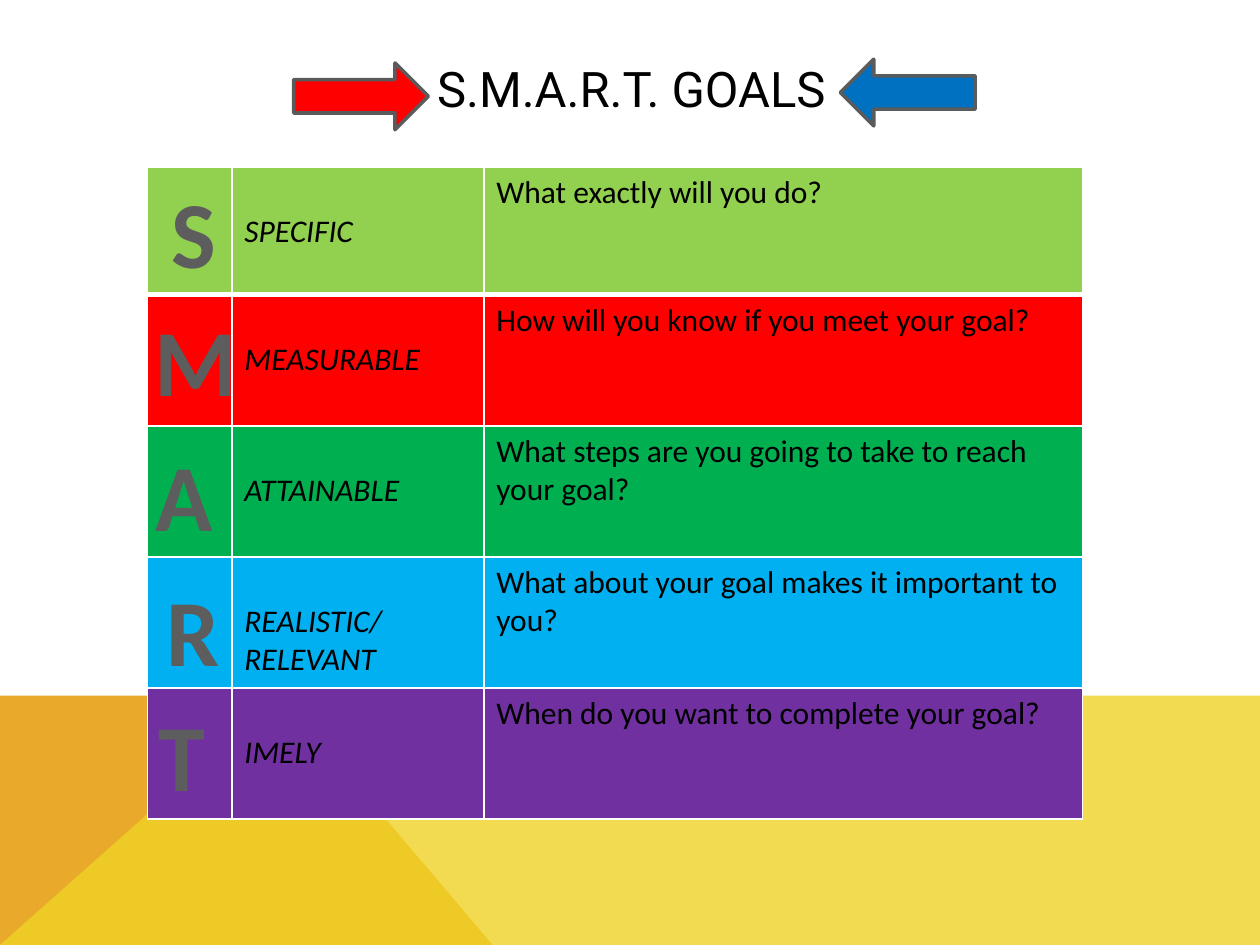
import dataclasses

import pptx
import pptx.dml.color
import pptx.enum.shapes
import pptx.enum.text
import pptx.oxml
import pptx.oxml.ns
import pptx.util
from pptx.enum.shapes import MSO_SHAPE
from pptx.enum.text import MSO_ANCHOR, PP_ALIGN


@dataclasses.dataclass(frozen=True)
class Theme:
    ink: str = "000000"
    letter: str = "5D5D5D"
    outline: str = "5A5B5D"
    rule: str = "FFFFFF"
    orange: str = "E9AA2B"
    yellow: str = "EFD225"
    red: str = "FF0000"
    blue: str = "0070C0"
    title_font: str = "Roboto"
    body_font: str = "Calibri"
    title_size: int = 28
    letter_size: int = 54
    body_size: int = 18


@dataclasses.dataclass(frozen=True)
class Box:
    """A place on a grid of 100 columns by 75 rows."""
    left: float
    top: float
    width: float
    height: float

    def emu(self) -> list:
        return [grid(n) for n in dataclasses.astuple(self)]


@dataclasses.dataclass(frozen=True)
class Goal:
    letter: str
    name: str
    question: str
    fill: str
    letter_box: Box
    wrap: bool = False


@dataclasses.dataclass(frozen=True)
class Arrow:
    kind: MSO_SHAPE
    box: Box
    fill: str


THEME = Theme()
COLS, ROWS = 100, 75
UNIT = pptx.util.Inches(10) / COLS
TABLE = Box(11.7, 13.3, 74.2, 51.7)
COLUMN_WIDTHS = (6.7, 20, 47.5)
ROW_HEIGHTS = (10.1, 10.4, 10.4, 10.4, 10.4)
TITLE = Box(9, 4, 82.2, 6)
HORIZON = 55.2

GOALS = (
    Goal("S", "SPECIFIC", "What exactly will you do?", "92D050",
         Box(11.7, 13.3, 7.3, 10.1)),
    Goal("M", "MEASURABLE", "How will you know if you meet your goal?", "FF0000",
         Box(11.3, 23.5, 7.4, 10.1), True),
    Goal("A", "ATTAINABLE", "What steps are you going to take to reach your goal?",
         "00B050", Box(11.1, 34.2, 7, 10.1)),
    Goal("R", "REALISTIC/\nRELEVANT", "What about your goal makes it important to you?",
         "00B0F0", Box(11.9, 44.9, 6.8, 10.1)),
    Goal("T", "IMELY", "When do you want to complete your goal?", "7030A0",
         Box(11.4, 54.8, 6, 10.1)),
)
ARROWS = (
    Arrow(MSO_SHAPE.RIGHT_ARROW, Box(23.3, 5, 10.7, 5.3), THEME.red),
    Arrow(MSO_SHAPE.LEFT_ARROW, Box(66.7, 4.7, 10.7, 5.3), THEME.blue),
)


def grid(n: float) -> int:
    return round(n * UNIT)


def rgb(color: str) -> pptx.dml.color.RGBColor:
    return pptx.dml.color.RGBColor.from_string(color)


def paint(target, color: str) -> None:
    target.fill.solid()
    target.fill.fore_color.rgb = rgb(color)


def format_text(tf, size: int, font: str, color: str, align=None, **styles) -> None:
    values = {"size": pptx.util.Pt(size), "name": font, **styles}
    for p in tf.paragraphs:
        p.alignment = align
        for r in p.runs:
            for key, value in values.items():
                setattr(r.font, key, value)
            r.font.color.rgb = rgb(color)


def add_facet(slide, points: list, color: str, opacity: int = 100) -> None:
    """Draw one flat polygon of the background."""
    corners = [(grid(x), grid(y)) for x, y in points]
    builder = slide.shapes.build_freeform(*corners[0])
    builder.add_line_segments(corners[1:], close=True)
    sp = builder.convert_to_shape()
    sp.shadow.inherit = False
    paint(sp, color)
    sp.line.fill.background()
    if opacity < 100:
        clr = sp.fill._xPr.find(".//" + pptx.oxml.ns.qn("a:srgbClr"))
        clr.append(pptx.oxml.parse_xml(
            f'<a:alpha {pptx.oxml.ns.nsdecls("a")} val="{opacity * 1000}"/>'))


def add_borders(cell, bottom: float, top: float) -> None:
    tc_pr = cell._tc.get_or_add_tcPr()
    for side, width in {"L": 1, "R": 1, "T": top, "B": bottom}.items():
        tc_pr.append(pptx.oxml.parse_xml(
            f'<a:ln{side} {pptx.oxml.ns.nsdecls("a")} w="{pptx.util.Pt(width)}">'
            f'<a:solidFill><a:srgbClr val="{THEME.rule}"/></a:solidFill></a:ln{side}>'))


def add_goal_table(slide) -> None:
    table = slide.shapes.add_table(len(GOALS), len(COLUMN_WIDTHS), *TABLE.emu()).table
    table.first_row = table.horz_banding = False
    for column, width in zip(table.columns, COLUMN_WIDTHS):
        column.width = grid(width)
    for i, (goal, height) in enumerate(zip(GOALS, ROW_HEIGHTS)):
        table.rows[i].height = grid(height)
        for cell, text in zip(table.rows[i].cells, ("", goal.name, goal.question)):
            add_borders(cell, bottom=3 if i == 0 else 1, top=3 if i == 1 else 1)
            paint(cell, goal.fill)
            cell.text = text
            is_name = text == goal.name
            format_text(cell.text_frame, THEME.body_size, THEME.body_font,
                        THEME.ink, italic=is_name, bold=False)
            if is_name:
                cell.margin_top = pptx.util.Inches(0.36)


def add_letter(slide, goal: Goal) -> None:
    tf = slide.shapes.add_textbox(*goal.letter_box.emu()).text_frame
    tf.word_wrap = goal.wrap
    tf.text = goal.letter
    format_text(tf, THEME.letter_size, THEME.body_font, THEME.letter,
                PP_ALIGN.CENTER, bold=True)


def add_arrow(slide, arrow: Arrow) -> None:
    sp = slide.shapes.add_shape(arrow.kind, *arrow.box.emu())
    sp.shadow.inherit = False
    paint(sp, arrow.fill)
    sp.line.color.rgb = rgb(THEME.outline)
    sp.line.width = pptx.util.Pt(2)


def set_title(slide, text: str) -> None:
    sp = slide.shapes.title
    sp.left, sp.top, sp.width, sp.height = TITLE.emu()
    sp.text_frame.text = text
    sp.text_frame.vertical_anchor = MSO_ANCHOR.MIDDLE
    format_text(sp.text_frame, THEME.title_size, THEME.title_font, THEME.ink,
                PP_ALIGN.CENTER)


def main() -> None:
    prs = pptx.Presentation()
    prs.slide_width, prs.slide_height = grid(COLS), grid(ROWS)
    slide = prs.slides.add_slide(prs.slide_layouts.get_by_name("Title Only"))
    add_facet(slide, [(0, ROWS), (0, HORIZON), (22.3, HORIZON), (39.1, ROWS)],
              THEME.orange)
    add_facet(slide, [(0, ROWS), (22.3, HORIZON), (COLS, HORIZON), (COLS, ROWS)],
              THEME.yellow, opacity=80)
    add_goal_table(slide)
    set_title(slide, "S.M.A.R.T. GOALS")
    for goal in GOALS:
        add_letter(slide, goal)
    for arrow in ARROWS:
        add_arrow(slide, arrow)
    prs.save("out.pptx")


if __name__ == "__main__":
    main()
